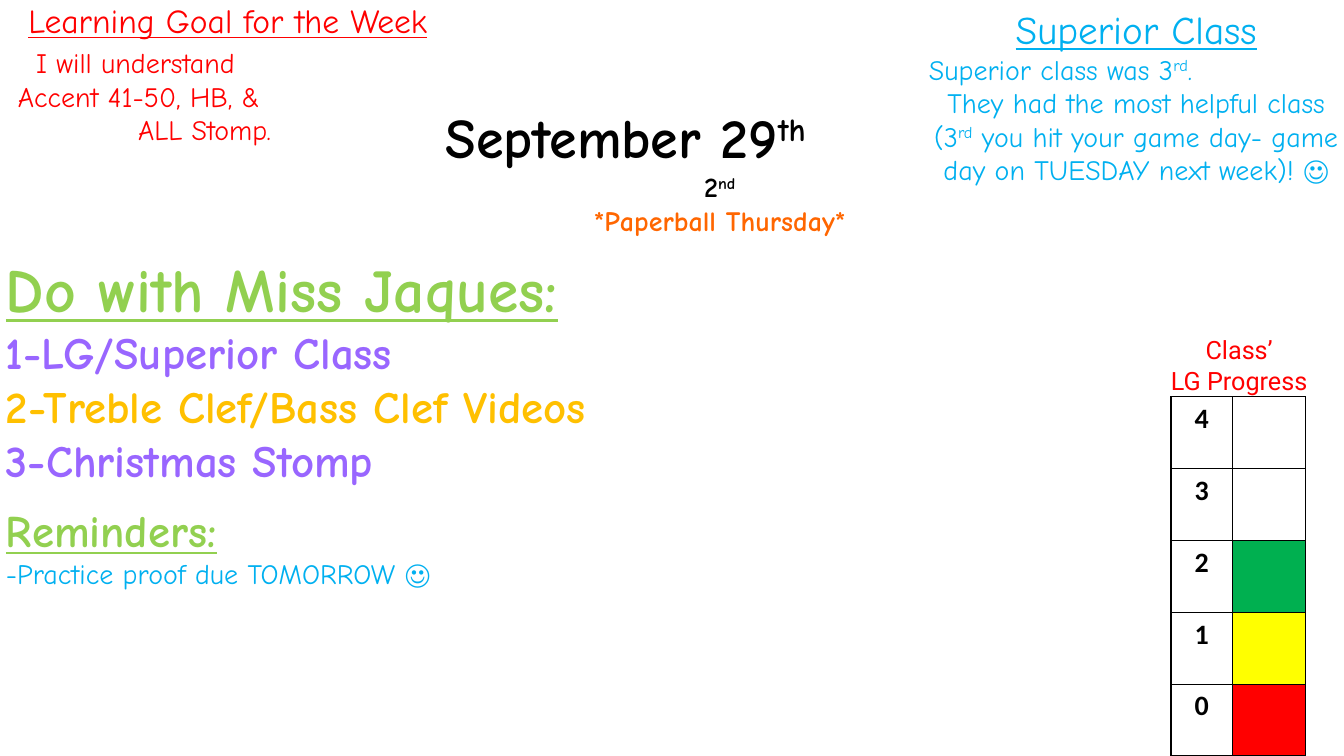
from dataclasses import dataclass

import pptx
import pptx.dml.color
import pptx.enum.text
import pptx.oxml
import pptx.oxml.ns
import pptx.util

Cm = pptx.util.Cm
Align = pptx.enum.text.PP_ALIGN


@dataclass(frozen=True)
class Theme:
    hand: str = "Comic Neue"
    plain: str = "Roboto"
    numeral: str = "Calibri"
    black: str = "000000"
    white: str = "FFFFFF"
    red: str = "FF0000"
    blue: str = "00B0F0"
    lime: str = "92D050"
    purple: str = "9966FF"
    amber: str = "FFC000"
    orange: str = "FF6600"
    green: str = "00B050"
    yellow: str = "FFFF00"
    huge: int = 44
    date: int = 40
    large: int = 32
    heading: int = 28
    subheading: int = 24
    body: int = 20
    label: int = 18


THEME = Theme()


@dataclass
class Style:
    size: int
    color: str
    font: str = THEME.hand
    bold: bool = False
    underline: bool = False


@dataclass
class Line:
    """One paragraph; every second piece of its text is superscript."""
    texts: tuple
    style: Style
    align: Align = Align.CENTER
    indent: float = 0
    space_before: int = 0


def rgb(color):
    return pptx.dml.color.RGBColor.from_string(color)


def add_span(para, text, style, raised=False):
    span = para.add_run()
    span.text = text
    span.font.name = style.font
    span.font.size = pptx.util.Pt(style.size)
    span.font.bold = style.bold
    span.font.underline = style.underline
    span.font.color.rgb = rgb(style.color)
    if raised:
        span._r.get_or_add_rPr().set("baseline", "30000")


def write_lines(box, lines):
    frame = box.text_frame
    frame.word_wrap = True
    frame.auto_size = pptx.enum.text.MSO_AUTO_SIZE.NONE
    frame.vertical_anchor = pptx.enum.text.MSO_ANCHOR.TOP
    for number, line in enumerate(lines):
        para = frame.add_paragraph() if number else frame.paragraphs[0]
        para.alignment = line.align
        para.space_before = pptx.util.Pt(line.space_before)
        if line.indent:
            properties = para._p.get_or_add_pPr()
            properties.set("marL", str(Cm(line.indent)))
            properties.set("indent", "0")
        for index, text in enumerate(line.texts):
            add_span(para, text, line.style, raised=index % 2 == 1)


def add_text(page, left, top, width, height, lines):
    box = page.shapes.add_textbox(Cm(left), Cm(top), Cm(width), Cm(height))
    write_lines(box, lines)


def set_title(page, left, top, width, height, lines):
    title = page.shapes.title
    title.left, title.top = Cm(left), Cm(top)
    title.width, title.height = Cm(width), Cm(height)
    write_lines(title, lines)


def format_cell(cell, fill):
    """Give the cell a solid fill and a thin black border on each side."""
    properties = cell._tc.get_or_add_tcPr()
    for side in ("lnL", "lnR", "lnT", "lnB"):
        properties.append(pptx.oxml.parse_xml(
            f'<a:{side} {pptx.oxml.ns.nsdecls("a")} w="12700"><a:solidFill>'
            f'<a:srgbClr val="{THEME.black}"/></a:solidFill></a:{side}>'))
    cell.fill.solid()
    cell.fill.fore_color.rgb = rgb(fill)


def add_progress_table(page, left, top, column_widths, row_height, levels):
    frame = page.shapes.add_table(
        len(levels), 2, Cm(left), Cm(top),
        Cm(sum(column_widths)), Cm(row_height * len(levels)))
    table = frame.table
    table.first_row = table.horz_banding = False
    for column, width in zip(table.columns, column_widths):
        column.width = Cm(width)
    style = Style(THEME.body, THEME.black, THEME.numeral, bold=True)
    for row, (level, color) in enumerate(levels):
        table.rows[row].height = Cm(row_height)
        number, marker = table.cell(row, 0), table.cell(row, 1)
        format_cell(number, THEME.white)
        format_cell(marker, color)
        para = number.text_frame.paragraphs[0]
        para.alignment = Align.CENTER
        add_span(para, level, style)


def main():
    deck = pptx.Presentation()
    deck.slide_width, deck.slide_height = Cm(33.87), Cm(19.05)
    page = deck.slides.add_slide(deck.slide_layouts.get_by_name("Title Only"))

    date = Style(THEME.date, THEME.black, bold=True)
    period = Style(THEME.body, THEME.black, bold=True)
    event = Style(THEME.body, THEME.orange, bold=True)
    set_title(page, 8.26, 2.46, 17.04, 4.24, [
        Line(("September 29", "th"), date, Align.LEFT, indent=2.72),
        Line(("2", "nd"), period),
        Line(("*Paperball Thursday*",), event),
    ])

    add_progress_table(page, 29.51, 10, (1.55, 1.83), 1.81, [
        ("4", THEME.white), ("3", THEME.white), ("2", THEME.green),
        ("1", THEME.yellow), ("0", THEME.red),
    ])
    label = Style(THEME.label, THEME.red, THEME.plain)
    add_text(page, 28.22, 8.31, 6.02, 1.8, [
        Line(("Class’",), label), Line(("LG Progress",), label),
    ])

    agenda = Style(THEME.huge, THEME.lime, bold=True, underline=True)
    purple_item = Style(THEME.large, THEME.purple, bold=True)
    amber_item = Style(THEME.large, THEME.amber, bold=True)
    reminders = Style(THEME.large, THEME.lime, bold=True, underline=True)
    note = Style(THEME.body, THEME.blue)
    add_text(page, -0.1, 6.2, 29.51, 8.89, [
        Line(("Do with Miss Jaques:",), agenda, Align.LEFT),
        Line(("1-LG/Superior Class",), purple_item, Align.LEFT),
        Line(("2-Treble Clef/Bass Clef Videos",), amber_item, Align.LEFT),
        Line(("3-Christmas Stomp",), purple_item, Align.LEFT),
        Line(("Reminders:",), reminders, Align.LEFT, space_before=12),
        Line(("-Practice proof due TOMORROW ☺",), note, Align.LEFT),
    ])

    goal_heading = Style(THEME.subheading, THEME.red, underline=True)
    add_text(page, -0.1, -0.13, 11.68, 2.06, [
        Line(("Learning Goal for the Week",), goal_heading),
    ])
    goal = Style(THEME.body, THEME.red)
    add_text(page, -0.1, 1.02, 10.49, 2.82, [
        Line(("I will understand",), goal, Align.LEFT, indent=0.76),
        Line(("Accent 41-50, HB, &",), goal, Align.LEFT, indent=0.3),
        Line(("ALL Stomp.",), goal, Align.LEFT, indent=3.33),
    ])

    superior = Style(THEME.heading, THEME.blue, underline=True)
    add_text(page, 23.16, 0, 10.95, 5.74, [
        Line(("Superior Class",), superior),
        Line(("Superior class was 3", "rd", "."), note, Align.LEFT),
        Line(("They had the most helpful class (3", "rd",
              " you hit your game day- game day on TUESDAY next week)! ☺"),
             note),
    ])

    deck.save("out.pptx")


if __name__ == "__main__":
    main()
